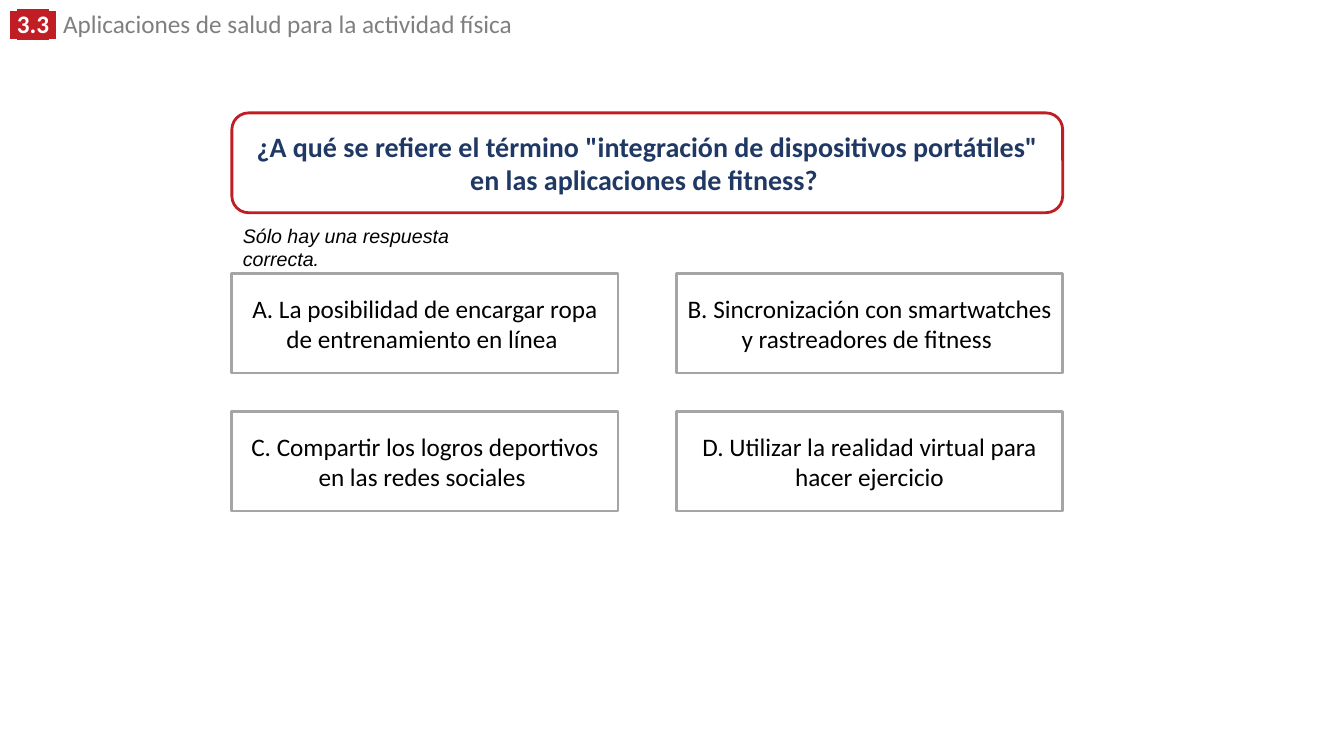
from lxml import etree
from pptx import Presentation
from pptx.dml.color import RGBColor
from pptx.enum import shapes, text
from pptx.oxml import ns
from pptx.util import Inches, Pt

COLORS = {
    "red": "C01E24",
    "navy": "203864",
    "grey": "7F7F7F",
    "border": "A5A5A5",
    "white": "FFFFFF",
    "black": "000000",
}
NUMBER = {"size": Pt(18), "bold": True, "name": "Calibri"}
HEADING = {"size": Pt(18), "bold": False, "name": "Calibri"}
QUESTION = {"size": Pt(20), "bold": True, "name": "Calibri"}
ANSWER = {"size": Pt(18), "name": "Calibri"}
HINT = {"size": Pt(14), "italic": True, "name": "Arial"}
ANSWERS = [
    "A. La posibilidad de encargar ropa de entrenamiento en línea ",
    "B. Sincronización con smartwatches y rastreadores de fitness ",
    "C. Compartir los logros deportivos en las redes sociales ",
    "D. Utilizar la realidad virtual para hacer ejercicio",
]


def rgb(color):
    """Return the named colour."""
    return RGBColor.from_string(COLORS[color])


def add_run(paragraph, wording, style, color):
    """Append a formatted run to a paragraph."""
    run = paragraph.add_run()
    run.text = wording
    run.font.color.rgb = rgb(color)
    for attribute, value in style.items():
        setattr(run.font, attribute, value)
    return run


def highlight(run, color):
    """Put a highlight colour behind a run."""
    marker = etree.Element(ns.qn("a:highlight"))
    etree.SubElement(marker, ns.qn("a:srgbClr"), val=COLORS[color])
    run.font.fill
    run._r.rPr.find(ns.qn("a:solidFill")).addnext(marker)


def add_label(slide, left, top, width, height):
    """Add a wrapping text box and return its first paragraph."""
    label = slide.shapes.add_textbox(*map(Inches, (left, top, width, height)))
    label.text_frame.word_wrap = True
    return label.text_frame.paragraphs[0]


def add_header(slide, left, top, width, height):
    """Place the section number and title in the given box."""
    header = add_label(slide, left, top, width, height)
    header.line_spacing = 0.8
    spacer = {**NUMBER, "name": "Arial"}
    for wording, style in ((" ", spacer), ("3.3", NUMBER), (" ", spacer)):
        highlight(add_run(header, wording, style, "white"), "red")
    add_run(header, " ", {**HEADING, "name": "Arial"}, "grey")
    add_run(header, "Aplicaciones de salud para la actividad física", HEADING, "grey")


def add_card(slide, box, outline, border, wording, style, color):
    """Draw a white outlined card with centred text."""
    card = slide.shapes.add_shape(outline, *map(Inches, box))
    card.shadow.inherit = False
    card.fill.solid()
    card.fill.fore_color.rgb = rgb("white")
    card.line.color.rgb = rgb(border)
    card.line.width = Pt(2)
    card.text_frame.word_wrap = True
    card.text_frame.vertical_anchor = text.MSO_ANCHOR.MIDDLE
    paragraph = card.text_frame.paragraphs[0]
    paragraph.alignment = text.PP_ALIGN.CENTER
    add_run(paragraph, wording, style, color)


def add_quiz(slide, left, top, width, card_height=0.99):
    """Place the question, the hint and the two-by-two grid of answers."""
    add_card(
        slide, (left, top, width, card_height),
        shapes.MSO_SHAPE.ROUNDED_RECTANGLE, "red",
        '¿A qué se refiere el término "integración de dispositivos portátiles" '
        "en las aplicaciones de fitness? ",
        QUESTION, "navy",
    )
    answer_width = 3.83
    column_step, row_step = width - answer_width, 1.37
    for index, answer in enumerate(ANSWERS):
        row, column = divmod(index, 2)
        box = (left + column * column_step, top + 1.59 + row * row_step,
               answer_width, card_height)
        add_card(slide, box, shapes.MSO_SHAPE.RECTANGLE, "border",
                 answer, ANSWER, "black")
    hint = add_label(slide, left + 0.01, top + 1.05, 2.36, 0.34)
    add_run(hint, "Sólo hay una respuesta correcta.", HINT, "black")


def main():
    """Build and save the quiz slide."""
    deck = Presentation()
    deck.slide_width, deck.slide_height = Inches(13.33), Inches(7.5)
    slide = deck.slides.add_slide(deck.slide_layouts[6])
    add_header(slide, 0, 0.09, 9.52, 0.34)
    add_quiz(slide, 2.3, 1.12, 8.24)
    deck.save("out.pptx")


if __name__ == "__main__":
    main()
